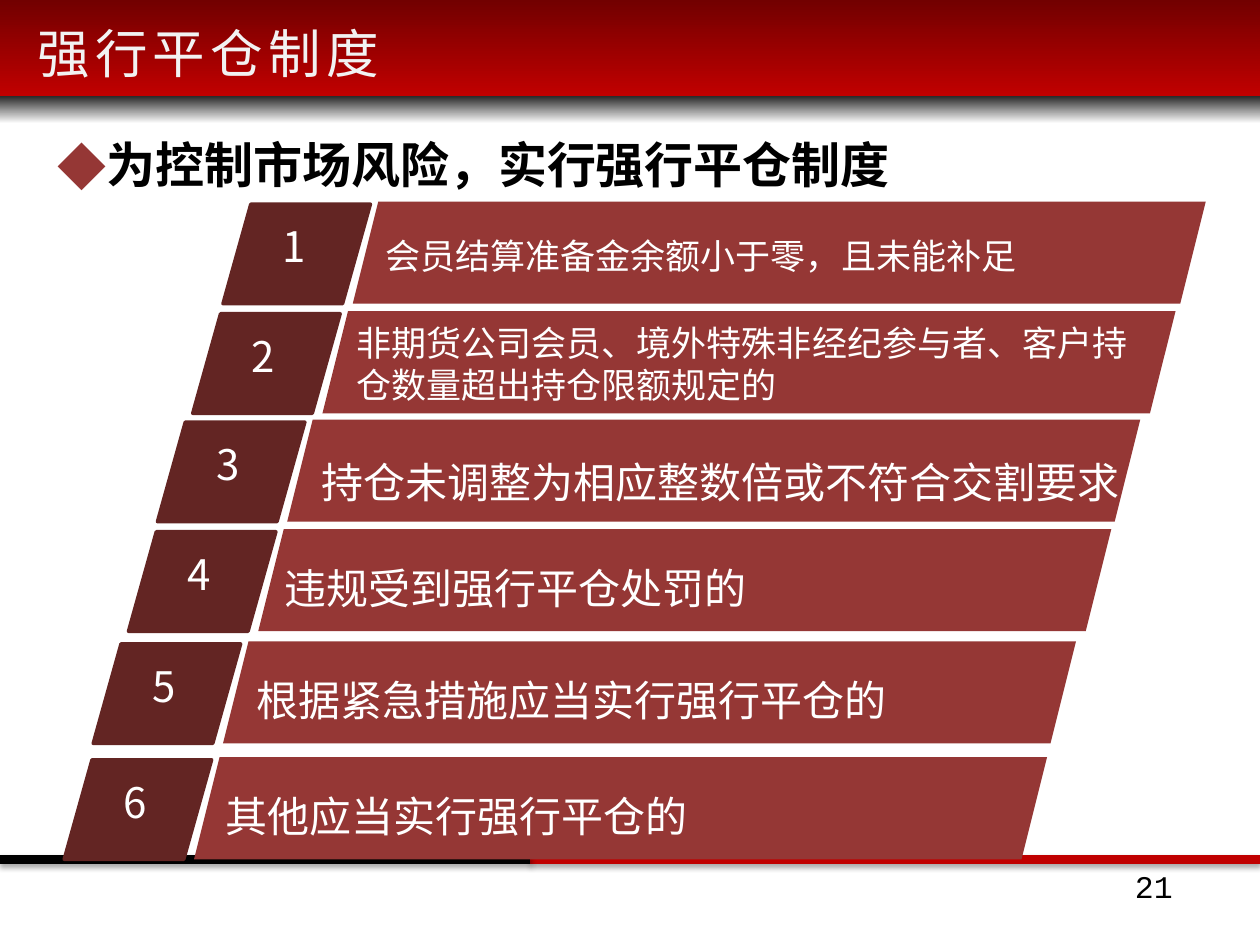
from lxml import etree
from pptx import Presentation
from pptx.dml.color import RGBColor
from pptx.enum.shapes import MSO_CONNECTOR, MSO_SHAPE
from pptx.enum.text import MSO_ANCHOR, PP_ALIGN
from pptx.oxml import parse_xml
from pptx.oxml.ns import nsdecls, qn
from pptx.util import Inches, Pt

COLORS = {
    "white": "FFFFFF", "black": "000000", "title": "F2F2F2", "red": "C00000",
    "header_top": "720000", "band": "262626", "dark": "632523", "bar": "953735",
}
CJK = "Noto Sans CJK SC"


def add_block(kind, x, y, w, h, color):
    sp = s.shapes.add_shape(kind, Inches(x), Inches(y), Inches(w), Inches(h))
    sp.shadow.inherit = False
    sp.fill.solid()
    sp.fill.fore_color.rgb = RGBColor.from_string(COLORS[color])
    sp.line.fill.background()
    return sp


def add_text(x, y, w, h, runs, size, color, anchor=MSO_ANCHOR.TOP):
    """Add a text box with one paragraph; runs is a list of (text, font)."""
    tf = s.shapes.add_textbox(Inches(x), Inches(y), Inches(w), Inches(h)).text_frame
    tf.word_wrap = True
    tf.vertical_anchor = anchor
    p = tf.paragraphs[0]
    for text, font in runs:
        r = p.add_run()
        r.text = text
        r.font.size = Pt(size)
        r.font.color.rgb = RGBColor.from_string(COLORS[color])
        r.font.name = font
        etree.SubElement(r._r.get_or_add_rPr(), qn("a:ea")).set("typeface", CJK)
    return p


prs = Presentation()
prs.slide_width, prs.slide_height = Inches(10), Inches(7.5)
s = prs.slides.add_slide(prs.slide_layouts[6])

# Header and the fading band below it
for y, h, top, bottom in [(0, 0.76, "header_top", "red"), (0.76, 0.22, "band", "white")]:
    sp = add_block(MSO_SHAPE.RECTANGLE, 0, y, 10, h, top)
    sp.fill.gradient()
    sp.fill.gradient_angle = 270
    for stop, color in zip(sp.fill.gradient_stops, (top, bottom)):
        stop.color.rgb = RGBColor.from_string(COLORS[color])

# Footer lines with a soft shadow
for x1, x2, color in [(4.21, 10, "red"), (0, 4.21, "black")]:
    line = s.shapes.add_connector(
        MSO_CONNECTOR.STRAIGHT, Inches(x1), Inches(6.82), Inches(x2), Inches(6.82))
    line.line.width = Pt(5)
    line.line.color.rgb = RGBColor.from_string(COLORS[color])
    line._element.spPr.append(parse_xml(
        f'<a:effectLst {nsdecls("a")}>'
        f'<a:outerShdw blurRad="{Pt(3.1)}" dist="{Pt(1.8)}" dir="5400000">'
        '<a:srgbClr val="000000"><a:alpha val="35000"/></a:srgbClr>'
        '</a:outerShdw></a:effectLst>'))

# Page number
add_text(8.91, 6.83, 0.83, 0.29, [("21", "Courier New")], 18, "black")

# Numbered bars: bar left and top, text left, top and height, size, runs
rows = [
    (2.80, 1.60, 2.96, 1.81, 0.44, 20,
     [("会员", "Calibri"), ("结算准备金余额小于零，且未能补足", CJK)]),
    (2.56, 2.47, 2.73, 2.50, 0.77, 20,
     [("非期货公司会员、境外特殊非经纪参与者、客户", "Calibri"),
      ("持仓数量超出持仓限额规定的", CJK)]),
    (2.28, 3.33, 2.45, 3.57, 0.50, 24, [("持仓未调整为相应整数倍或不符合交割要求", CJK)]),
    (2.05, 4.20, 2.16, 4.41, 0.51, 24, [("违规受到强行平仓处罚的", CJK)]),
    (1.77, 5.09, 1.94, 5.30, 0.51, 24, [("根据紧急措施应当实行强行平仓的", CJK)]),
    (1.54, 6.01, 1.69, 6.22, 0.51, 24, [("其他应当实行强行平仓的", CJK)]),
]
for number, (x, y, text_x, text_y, text_h, size, runs) in enumerate(rows, 1):
    tile = add_block(MSO_SHAPE.PARALLELOGRAM, x - 1.03, y + 0.02, 1.17, 0.79, "dark")
    tile.adjustments[0] = 0.28
    tile.line.color.rgb = RGBColor.from_string(COLORS["dark"])
    tile.line.width = Pt(2)
    add_text(x - 0.66, y + 0.1, 0.45, 0.5, [(str(number), CJK)], 24, "white",
             MSO_ANCHOR.MIDDLE)
    add_block(MSO_SHAPE.PARALLELOGRAM, x, y, 6.77, 0.81, "bar")
    p = add_text(text_x, text_y, 6.57, text_h, runs, size, "white", MSO_ANCHOR.MIDDLE)
    if size == 20:
        p.line_spacing = Pt(24)

# Bulleted lead sentence
p = add_text(0.12, 1.21, 9.21, 0.41, [("为控制市场风险，实行强行平仓制度", CJK)], 28, "black")
p.runs[0].font.bold = True
p.alignment = PP_ALIGN.JUSTIFY
p.line_spacing = Pt(20)
pPr = p._p.get_or_add_pPr()
pPr.set("marL", str(Inches(0.62)))
pPr.set("indent", str(Inches(-0.38)))
bullet_color = etree.SubElement(pPr, qn("a:buClr"))
etree.SubElement(bullet_color, qn("a:srgbClr")).set("val", COLORS["bar"])
etree.SubElement(pPr, qn("a:buFont")).set("typeface", CJK)
etree.SubElement(pPr, qn("a:buChar")).set("char", "◆")

# Title
p = add_text(0.2, 0.12, 8.3, 0.84, [("强行平仓制度", CJK)], 30, "title")
p.runs[0]._r.get_or_add_rPr().set("spc", "300")

prs.save("out.pptx")
